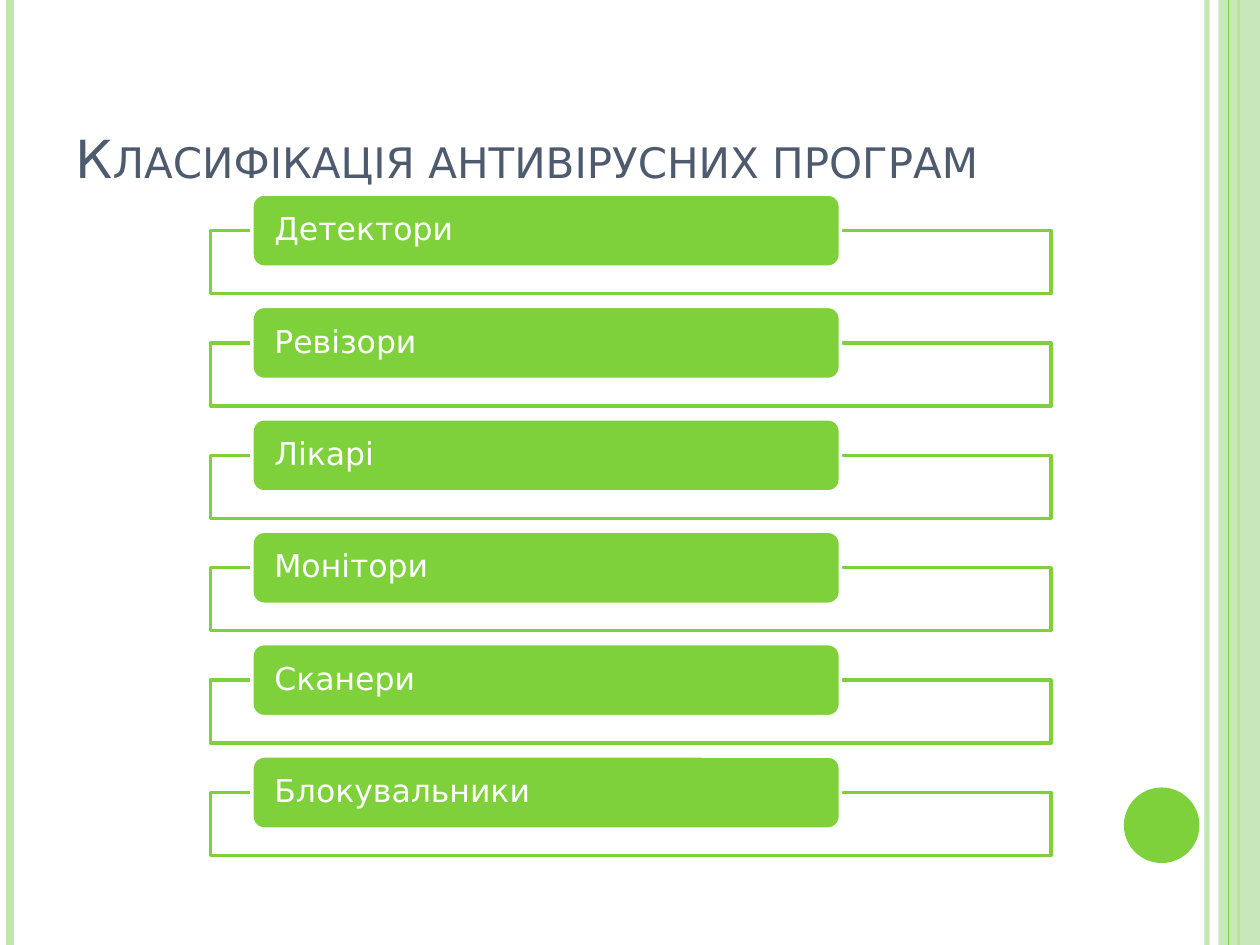
from dataclasses import dataclass

import lxml.etree
import pptx
import pptx.dml.color
import pptx.enum.shapes
import pptx.enum.text
import pptx.oxml.ns
import pptx.util
from pptx.util import Inches

COLORS = {
    "green": "7FD13B",
    "pale": "C0E5AF",
    "slate": "4E5B6F",
    "white": "FFFFFF",
}
FONT = "DejaVu Sans"
SHAPES = pptx.enum.shapes.MSO_SHAPE
SLIDE_WIDTH, SLIDE_HEIGHT = 10, 7.5
FIRST_TOP, ROW_PITCH = 1.54, 0.892
PROGRAM_TYPES = ["Детектори", "Ревізори", "Лікарі", "Монітори", "Сканери", "Блокувальники"]


@dataclass
class Box:
    left: float
    top: float
    width: float
    height: float

    def lengths(self) -> list:
        return [Inches(value) for value in (self.left, self.top, self.width, self.height)]


@dataclass
class Stripe:
    x: float
    color: str
    weight: float
    opacity: int = 100


def rgb(name: str):
    return pptx.dml.color.RGBColor.from_string(COLORS[name])


def set_opacity(element, percent: int) -> None:
    """Add an alpha value to the first colour below the element."""
    color = element.find(".//" + pptx.oxml.ns.qn("a:srgbClr"))
    alpha = lxml.etree.SubElement(color, pptx.oxml.ns.qn("a:alpha"))
    alpha.set("val", str(percent * 1000))


def add_stripe(slide, stripe: Stripe) -> None:
    x = Inches(stripe.x)
    connector = slide.shapes.add_connector(
        pptx.enum.shapes.MSO_CONNECTOR.STRAIGHT, x, 0, x, Inches(SLIDE_HEIGHT))
    connector.line.color.rgb = rgb(stripe.color)
    connector.line.width = pptx.util.Pt(stripe.weight)
    properties = connector._element.spPr
    if stripe.opacity < 100:
        set_opacity(properties, stripe.opacity)
    lxml.etree.SubElement(properties, pptx.oxml.ns.qn("a:effectLst"))


def add_shape(slide, kind, box: Box, fill: str, line: str = "", opacity: int = 100):
    shape = slide.shapes.add_shape(kind, *box.lengths())
    shape.shadow.inherit = False
    shape.fill.solid()
    shape.fill.fore_color.rgb = rgb(fill)
    if opacity < 100:
        set_opacity(shape._element.spPr, opacity)
    if line:
        shape.line.color.rgb = rgb(line)
        shape.line.width = pptx.util.Pt(2)
    else:
        shape.line.fill.background()
    return shape


def write_text(shape, text: str, size: float, color: str, anchor):
    frame = shape.text_frame
    frame.word_wrap = True
    frame.vertical_anchor = anchor
    paragraph = frame.paragraphs[0]
    paragraph.text = text
    paragraph.alignment = pptx.enum.text.PP_ALIGN.LEFT
    paragraph.font.name = FONT
    paragraph.font.size = pptx.util.Pt(size)
    paragraph.font.color.rgb = rgb(color)
    return paragraph


def add_row(slide, text: str, top: float) -> None:
    """Draw an outlined frame with a rounded label over its upper edge."""
    add_shape(slide, SHAPES.RECTANGLE, Box(1.67, top + 0.29, 6.67, 0.5),
              "white", "green", opacity=90)
    label = add_shape(slide, SHAPES.ROUNDED_RECTANGLE, Box(2, top, 4.67, 0.58),
                      "green", "white")
    frame = label.text_frame
    frame.margin_left = frame.margin_right = Inches(0.15)
    frame.margin_top = frame.margin_bottom = 0
    paragraph = write_text(label, text, 18, "white", pptx.enum.text.MSO_ANCHOR.MIDDLE)
    paragraph.line_spacing = 0.9


def main() -> None:
    presentation = pptx.Presentation()
    presentation.slide_width = Inches(SLIDE_WIDTH)
    presentation.slide_height = Inches(SLIDE_HEIGHT)
    slide = presentation.slides.add_slide(presentation.slide_layouts[6])

    # Side decoration, with the pale band above the first three stripes
    for stripe in (Stripe(9.58, "pale", 3, 93), Stripe(0.08, "pale", 4.5),
                   Stripe(9.83, "green", 1.5)):
        add_stripe(slide, stripe)
    add_shape(slide, SHAPES.RECTANGLE, Box(9.67, 0, 0.33, SLIDE_HEIGHT), "pale", opacity=87)
    add_stripe(slide, Stripe(9.75, "green", 0.75))
    add_shape(slide, SHAPES.OVAL, Box(8.92, 6.25, 0.6, 0.6), "green")

    # Title in small capitals
    title = slide.shapes.add_textbox(*Box(0.5, 0.3, 8.17, 1.25).lengths())
    paragraph = write_text(title, "Класифікація антивірусних програм", 30, "slate",
                           pptx.enum.text.MSO_ANCHOR.BOTTOM)
    paragraph.runs[0]._r.get_or_add_rPr().set("cap", "small")

    # List of program types
    for index, program_type in enumerate(PROGRAM_TYPES):
        add_row(slide, program_type, FIRST_TOP + index * ROW_PITCH)

    presentation.save("out.pptx")


if __name__ == "__main__":
    main()
